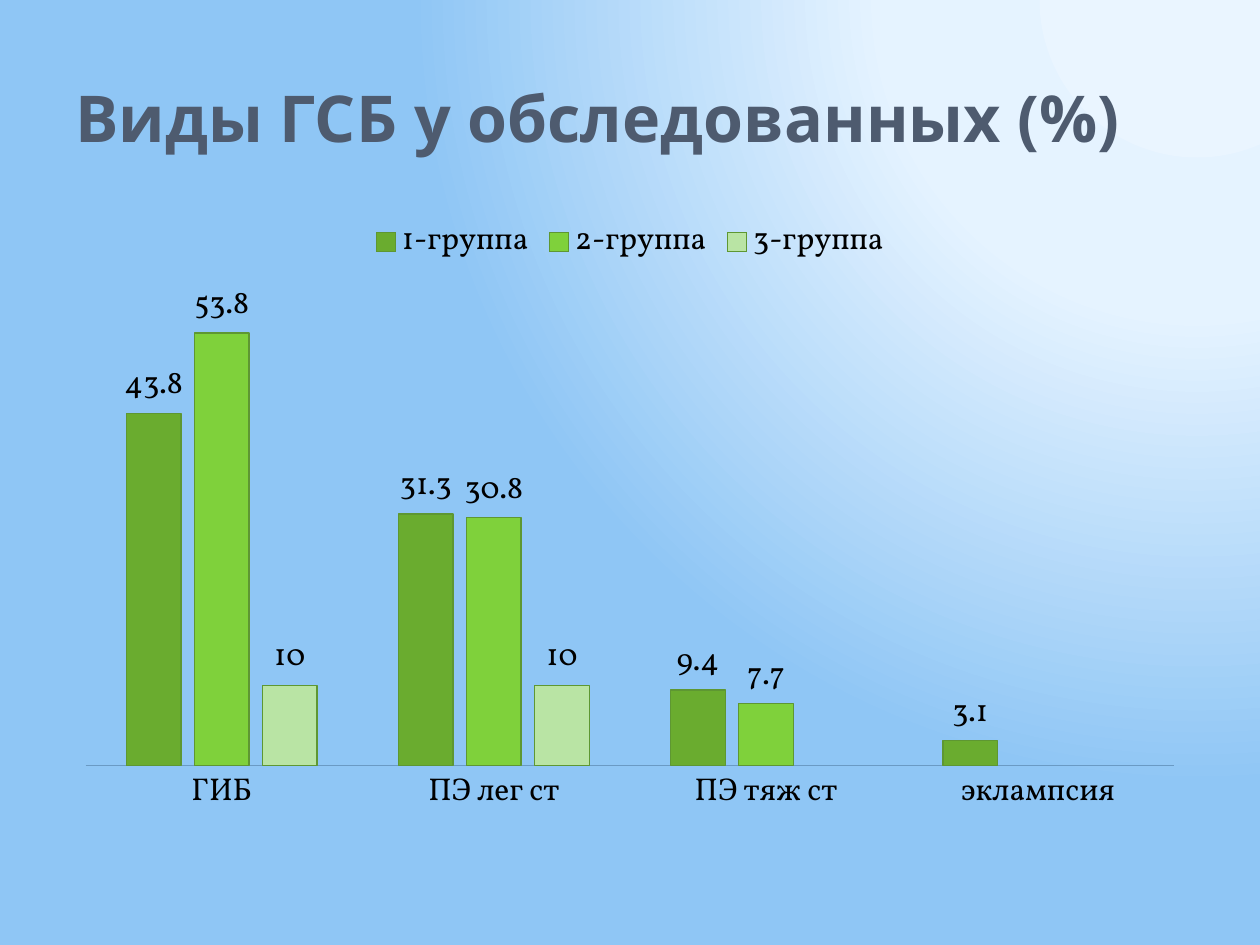
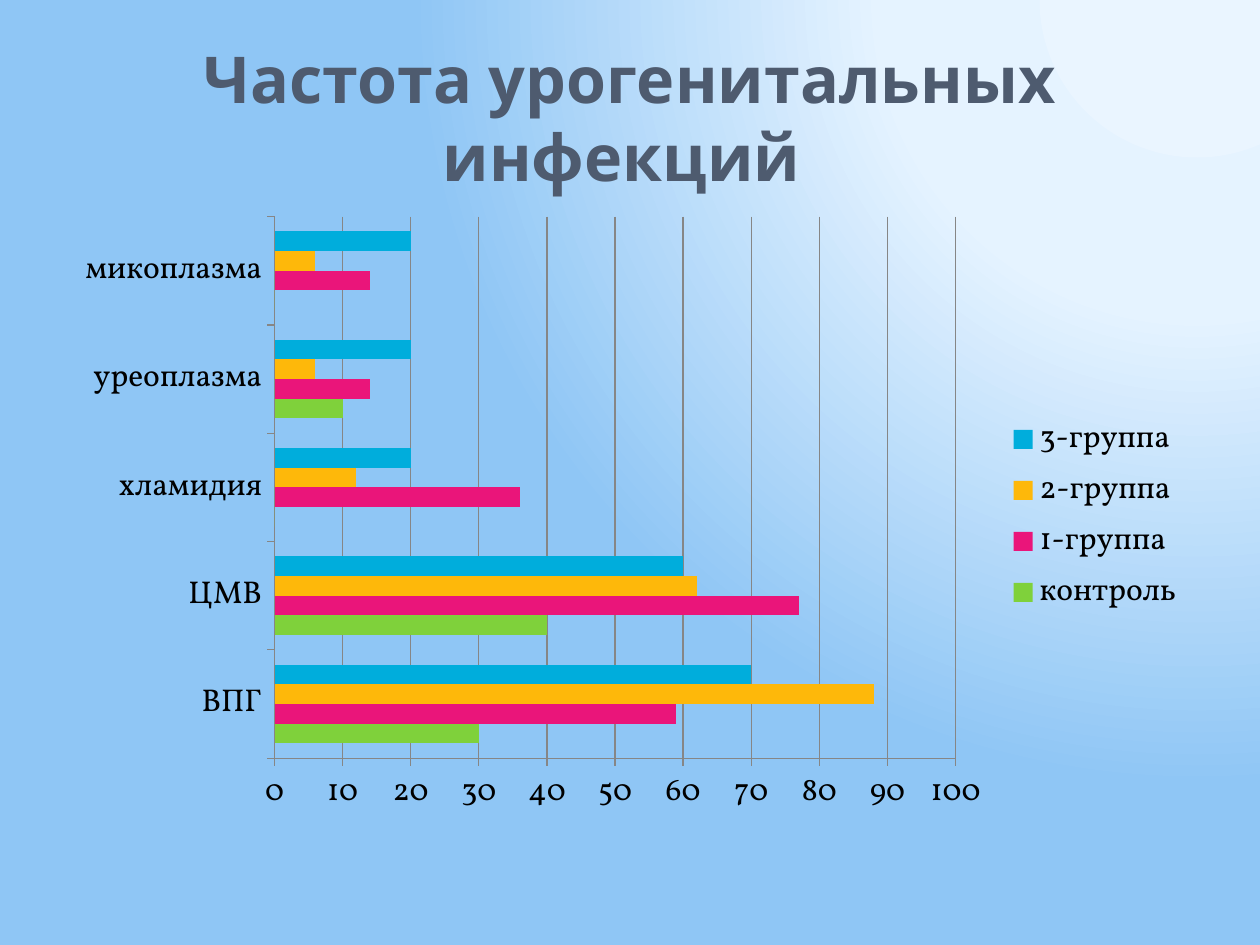
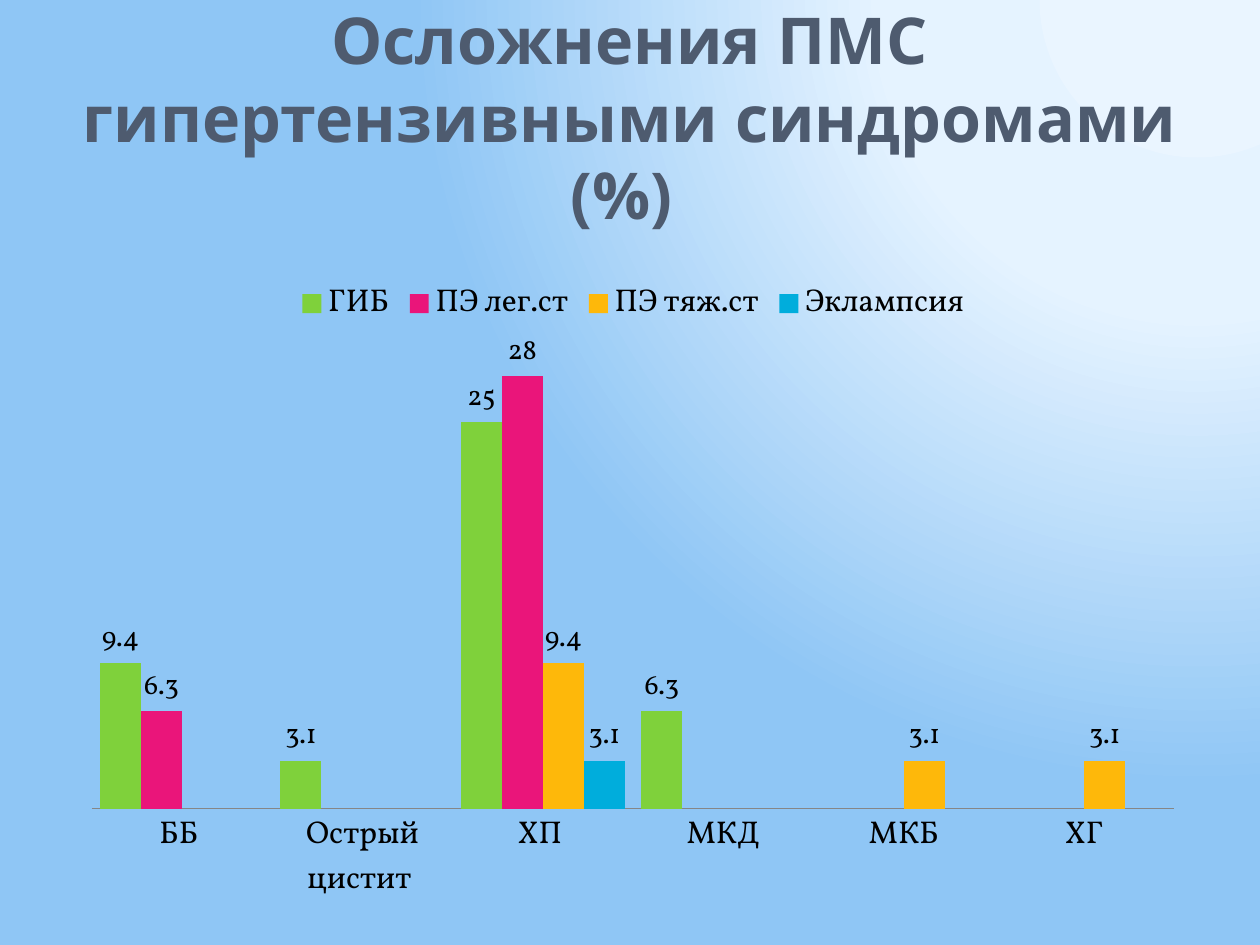
import pptx
import pptx.chart.data
import pptx.dml.color
import pptx.enum.chart
import pptx.enum.text
import pptx.oxml
import pptx.oxml.ns
import pptx.util

Pt = pptx.util.Pt
XL = pptx.enum.chart.XL_CHART_TYPE
LEGEND = pptx.enum.chart.XL_LEGEND_POSITION
TICK = pptx.enum.chart.XL_TICK_MARK
CENTER = pptx.enum.text.PP_ALIGN.CENTER

# Shared look
TITLE_FONT, CHART_FONT = "Noto Sans", "Vollkorn"
TITLE_COLOR, TEXT_COLOR, AXIS_COLOR = "4E5B6F", "000000", "868686"
BACKGROUND = [(0, "EAF5FF"), (40, "E5F3FF"), (100, "8FC6F5")]
GREENS = ["6AAC2F", "7FD13B", "B9E4A4"]
ACCENTS = ["7FD13B", "EA157A", "FEB80A", "00ADDC"]
TITLE_BOX = (36, 21.6, 648, 90)
CHART_BOX = (36, 116.64, 648, 356.4)
LOW_CHART_BOX = (39.6, 151.92, 644.4, 371.52)


def rgb(hex_color):
    return pptx.dml.color.RGBColor.from_string(hex_color)


def set_background(master):
    """Radial gradient that glows from beyond the top right corner."""
    master.background.fill.gradient()
    old = master.element.find(".//" + pptx.oxml.ns.qn("a:gradFill"))
    stops = "".join(
        f'<a:gs pos="{pos * 1000}"><a:srgbClr val="{color}"/></a:gs>'
        for pos, color in BACKGROUND)
    grad = pptx.oxml.parse_xml(
        f'<a:gradFill {pptx.oxml.ns.nsdecls("a")} rotWithShape="1">'
        f'<a:gsLst>{stops}</a:gsLst><a:path path="circle">'
        '<a:fillToRect l="95000" t="-106000" r="5000" b="206000"/>'
        '</a:path></a:gradFill>')
    old.getparent().replace(old, grad)


def add_text(s, text, box, size, color, font, bold=False, align=None):
    tf = s.shapes.add_textbox(*map(Pt, box)).text_frame
    tf.word_wrap = True
    tf.vertical_anchor = pptx.enum.text.MSO_ANCHOR.MIDDLE
    p = tf.paragraphs[0]
    p.alignment = align
    r = p.add_run()
    r.text = text
    r.font.size, r.font.bold, r.font.name = Pt(size), bold, font
    r.font.color.rgb = rgb(color)


def add_slide(prs, title, align=None):
    s = prs.slides.add_slide(prs.slide_layouts[6])
    add_text(s, title, TITLE_BOX, 36.9, TITLE_COLOR, TITLE_FONT,
             bold=True, align=align)
    return s


def set_line(line, color, width=0.75):
    line.color.rgb = rgb(color)
    line.width = Pt(width)


def add_bars(s, cats, series, box, top, kind=XL.COLUMN_CLUSTERED, colors=ACCENTS,
             outline=None, gap=150, overlap=0, legend=LEGEND.TOP, labels=True,
             label_size=18, axis_color=AXIS_COLOR):
    """Bar chart: with value labels, or with a value axis and grid instead."""
    data = pptx.chart.data.CategoryChartData()
    data.categories = cats
    for name, values in series.items():
        data.add_series(name, values)
    chart = s.shapes.add_chart(kind, *map(Pt, box), data).chart
    chart.has_title = False
    chart.font.size, chart.font.name = Pt(18), CHART_FONT
    chart.font.color.rgb = rgb(TEXT_COLOR)
    chart.has_legend = True
    chart.legend.position = legend
    chart.legend.include_in_layout = False

    # Axes
    cat_axis, val_axis = chart.category_axis, chart.value_axis
    cat_axis.major_tick_mark = TICK.NONE if labels else TICK.OUTSIDE
    set_line(cat_axis.format.line, axis_color)
    val_axis.minimum_scale, val_axis.maximum_scale = 0, top
    val_axis.major_unit = 10
    val_axis.visible = not labels
    val_axis.has_major_gridlines = not labels
    if not labels:
        val_axis.major_tick_mark = TICK.OUTSIDE
        set_line(val_axis.format.line, axis_color)
        set_line(val_axis.major_gridlines.format.line, axis_color)

    # Bars
    plot = chart.plots[0]
    plot.gap_width, plot.overlap = gap, overlap
    plot.vary_by_categories = False
    for bars, color in zip(plot.series, colors):
        bars.invert_if_negative = False
        bars.format.fill.solid()
        bars.format.fill.fore_color.rgb = rgb(color)
        if outline:
            set_line(bars.format.line, outline)
        if labels:
            marks = bars.data_labels
            marks.show_value = True
            marks.position = pptx.enum.chart.XL_LABEL_POSITION.OUTSIDE_END
            marks.font.size, marks.font.name = Pt(label_size), CHART_FONT
            marks.font.color.rgb = rgb(TEXT_COLOR)


def main():
    prs = pptx.Presentation()
    prs.slide_width, prs.slide_height = Pt(720), Pt(540)
    set_background(prs.slide_master)

    # Kinds of disorder by group
    s = add_slide(prs, "Виды ГСБ у обследованных (%)")
    add_bars(s, ["ГИБ", "ПЭ лег ст", "ПЭ тяж ст", "эклампсия"], {
        "1-группа": [43.8, 31.3, 9.4, 3.1],
        "2-группа": [53.8, 30.8, 7.7, None],
        "3-группа": [10, 10, None, None],
    }, CHART_BOX, 60, colors=GREENS, outline="5E9732", overlap=-25,
        axis_color="6A9AC4")

    # Infections
    s = add_slide(prs, "Частота урогенитальных инфекций ", CENTER)
    add_bars(s, ["ВПГ", "ЦМВ", "хламидия", "уреоплазма", "микоплазма"], {
        "контроль": [30, 40, 0, 10, 0],
        "1-группа": [59, 77, 36, 14, 14],
        "2-группа": [88, 62, 12, 6, 6],
        "3-группа": [70, 60, 20, 20, 20],
    }, CHART_BOX, 100, kind=XL.BAR_CLUSTERED, legend=LEGEND.RIGHT, labels=False)

    # Complications: wide bars leave each label room above its own bar
    s = add_slide(prs, "Осложнения ПМС гипертензивными синдромами (%) ", CENTER)
    add_bars(s, ["ББ ", "Острый цистит ", "ХП ", "МКД", "МКБ", "ХГ"], {
        "ГИБ": [9.4, 3.1, 25, 6.3, None, None],
        "ПЭ лег.ст": [6.3, None, 28, None, None, None],
        "ПЭ тяж.ст": [None, None, 9.4, None, 3.1, 3.1],
        "Эклампсия": [None, None, 3.1, None, None, None],
    }, LOW_CHART_BOX, 30, gap=40, label_size=16)

    prs.save("out.pptx")


if __name__ == "__main__":
    main()
